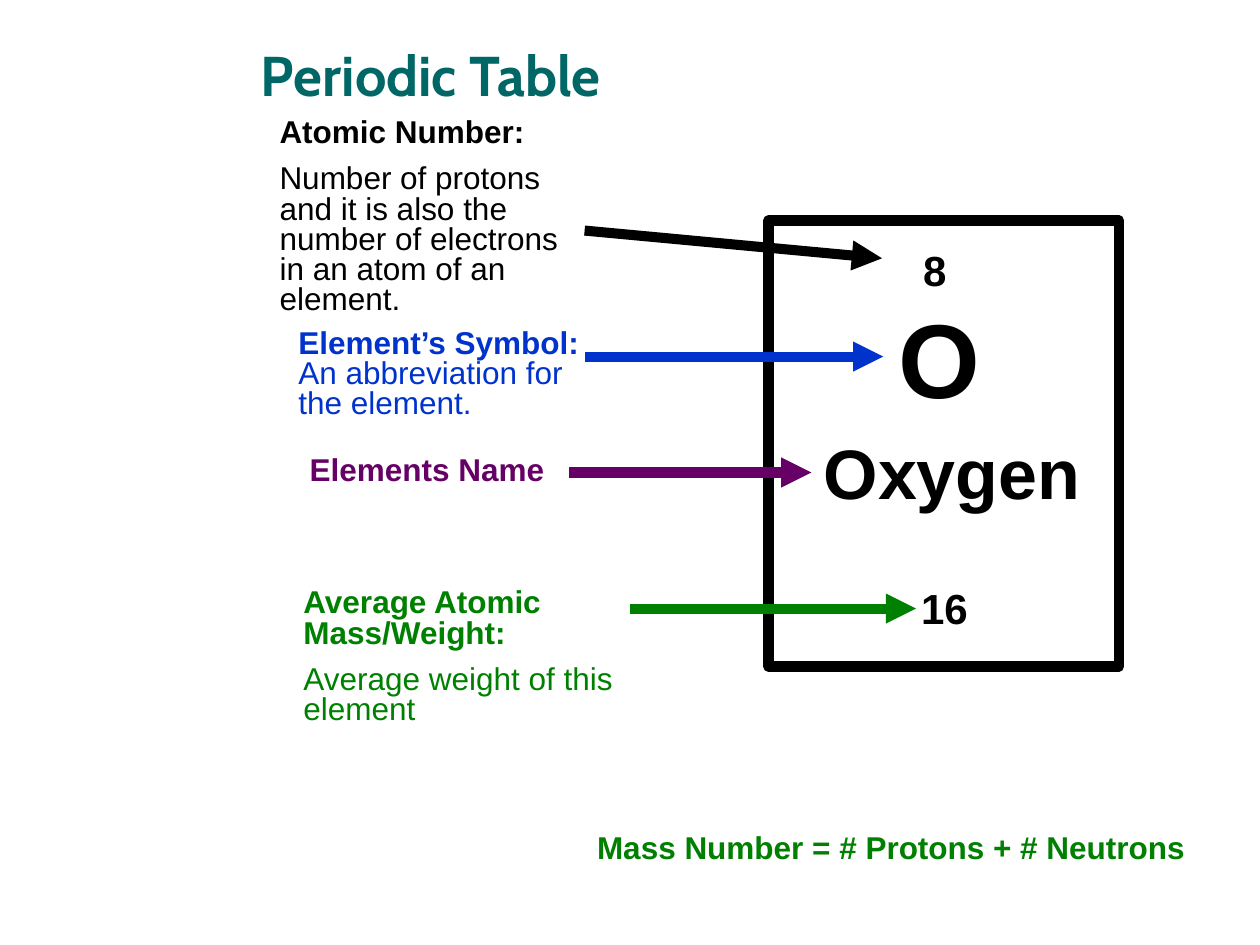
from lxml.etree import SubElement
from pptx import Presentation
from pptx.dml.color import RGBColor
from pptx.enum.shapes import MSO_CONNECTOR, MSO_SHAPE
from pptx.enum.text import MSO_ANCHOR, MSO_AUTO_SIZE, PP_ALIGN as Align
from pptx.oxml.ns import qn
from pptx.util import Pt

PX = 9144  # EMU in one px, 100 px to the inch
COLORS = {
    "title": "006666",
    "black": "000000",
    "blue": "0033CC",
    "purple": "660066",
    "green": "008000",
}

# Element tile: text, size, box
TILE_TEXTS = [
    ("8", 24, (693, 197, 98, 42)),
    ("O", 60, (683, 247, 125, 90)),
    ("Oxygen", 40, (637, 349, 237, 63)),
    ("16", 24, (702, 465, 95, 42)),
]

# Explanations: colour, box, paragraphs of (text, bold) runs
LABELS = [
    ("black", (212, 90, 258, 208), [
        [("Atomic Number:", True)],
        [("Number of protons and it is also the number of electrons "
          "in an atom of an element.", False)],
    ]),
    ("blue", (227, 257, 264, 82), [
        [("Element’s Symbol:\n", True),
         ("An abbreviation for the element.", False)],
    ]),
    ("purple", (236, 358, 264, 34), [[("Elements Name", True)]]),
    ("green", (231, 463, 334, 122), [
        [("Average Atomic Mass/Weight:", True)],
        [("Average weight of this element", False)],
    ]),
    ("green", (464, 658, 499, 34),
     [[("Mass Number = # Protons + # Neutrons", True)]]),
]

# Arrows: colour, start x, start y, end x, end y
ARROWS = [
    ("black", (464, 183, 700, 205)),
    ("blue", (464, 283, 701, 283)),
    ("purple", (452, 375, 644, 375)),
    ("green", (500, 483, 727, 483)),
]


def emu(lengths):
    return [length * PX for length in lengths]


def rgb(name):
    return RGBColor.from_string(COLORS[name])


def set_font(font, color, **values):
    for name, value in values.items():
        setattr(font, name, value)
    font.color.rgb = rgb(color)


def add_title(slide, text, box):
    title = slide.shapes.title
    for name, value in zip(("left", "top", "width", "height"), emu(box)):
        setattr(title, name, value)
    frame = title.text_frame
    frame.text = text
    frame.vertical_anchor = MSO_ANCHOR.MIDDLE
    paragraph = frame.paragraphs[0]
    paragraph.alignment = Align.LEFT
    set_font(paragraph.runs[0].font, "title", name="Cabin", size=Pt(32), bold=True)


def add_text(slide, box, paragraphs, color, size=18, align=Align.LEFT):
    frame = slide.shapes.add_textbox(*emu(box)).text_frame
    frame.word_wrap = True
    frame.auto_size = MSO_AUTO_SIZE.SHAPE_TO_FIT_TEXT
    for index, runs in enumerate(paragraphs):
        paragraph = frame.add_paragraph() if index else frame.paragraphs[0]
        paragraph.alignment = align
        paragraph.line_spacing = 0.8
        paragraph.space_before = Pt(size / 2 if index else 0)
        for text, bold in runs:
            run = paragraph.add_run()
            run.text = text.rstrip("\n")
            set_font(run.font, color, name="Arial", size=Pt(size), bold=bold)
            if text.endswith("\n"):
                paragraph.add_line_break()


def add_tile(slide, box):
    tile = slide.shapes.add_shape(MSO_SHAPE.RECTANGLE, *emu(box))
    tile.shadow.inherit = False
    tile.fill.background()
    tile.line.color.rgb = rgb("black")
    tile.line.width = Pt(6)


def add_arrow(slide, ends, color):
    arrow = slide.shapes.add_connector(MSO_CONNECTOR.STRAIGHT, *emu(ends))
    arrow.line.color.rgb = rgb(color)
    arrow.line.width = Pt(5.75)
    SubElement(arrow.line._get_or_add_ln(), qn("a:tailEnd"), type="triangle")
    SubElement(arrow._element.spPr, qn("a:effectLst"))


def main():
    presentation = Presentation()
    presentation.slide_width, presentation.slide_height = emu((1000, 750))
    slide = presentation.slides.add_slide(presentation.slide_layouts[5])

    add_title(slide, "Periodic Table", (197, 13, 767, 92))

    # Element tile
    add_tile(slide, (610, 175, 278, 354))
    for text, size, box in TILE_TEXTS:
        add_text(slide, box, [[(text, True)]], "black", size, Align.CENTER)

    # Explanations and their arrows
    for color, box, paragraphs in LABELS:
        add_text(slide, box, paragraphs, color)
    for color, ends in ARROWS:
        add_arrow(slide, ends, color)

    presentation.save("out.pptx")


if __name__ == "__main__":
    main()
